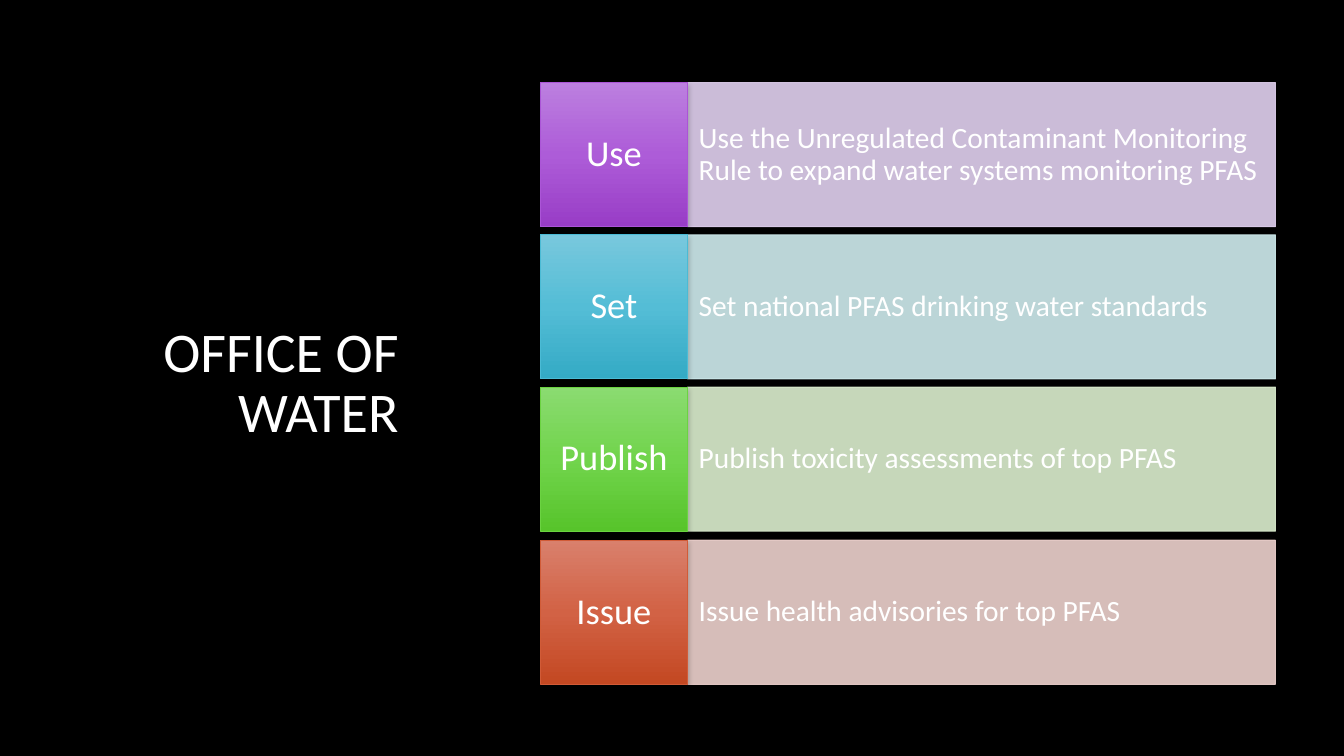
"""Build the Office of Water slide: a title beside four labelled action rows."""
from dataclasses import dataclass

from lxml import etree
from pptx import Presentation
from pptx import util as u
from pptx.dml.color import RGBColor
from pptx.enum import shapes, text
from pptx.oxml import ns

PX = 9144


@dataclass(frozen=True)
class Theme:
    font: str = "Calibri"
    background: str = "000000"
    ink: str = "FFFFFF"
    shadow: str = "000000"
    title_size: int = 40
    label_size: int = 26
    body_size: int = 21
    line_width: float = 0.75


@dataclass(frozen=True)
class Box:
    left: int
    top: int
    width: int
    height: int

    def emu(self) -> list[int]:
        return [v * PX for v in (self.left, self.top, self.width, self.height)]


@dataclass(frozen=True)
class Action:
    label: str
    body: str
    gradient: tuple[str, str, str]
    edge: str
    tint: str


THEME = Theme()
ACTIONS = [
    Action("Use", "Use the Unregulated Contaminant Monitoring Rule to expand water systems monitoring PFAS",
           ("BC7FDF", "AD5CD8", "983DC6"), "AB54D7", "E2D1F0"),
    Action("Set", "Set national PFAS drinking water standards",
           ("78C8DD", "54BDD6", "34AAC5"), "4ABBD5", "D0EDEF"),
    Action("Publish", "Publish toxicity assessments of top PFAS",
           ("8BDB71", "71D44C", "57C42B"), "6BD341", "DCEFCF"),
    Action("Issue", "Issue health advisories for top PFAS",
           ("D9806C", "D26245", "C34822"), "D15B37", "EED2CE"),
]


def child(parent, tag: str, **attrs: object):
    return etree.SubElement(parent, ns.qn(tag), {k: str(v) for k, v in attrs.items()})


def write(sp, content: str, *, size: int, align, anchor=text.MSO_ANCHOR.MIDDLE,
          inset: tuple[int, int] = (10, 5)) -> None:
    tf = sp.text_frame
    tf.word_wrap = True
    tf.vertical_anchor = anchor
    tf.margin_left = tf.margin_right = inset[0] * PX
    tf.margin_top = tf.margin_bottom = inset[1] * PX
    p = tf.paragraphs[0]
    p.alignment = align
    p.line_spacing = 0.9
    r = p.add_run()
    r.text = content
    r.font.name = THEME.font
    r.font.size = u.Pt(size)
    r.font.color.rgb = RGBColor.from_string(THEME.ink)


def add_rect(s, box: Box, fill: str, edge: str):
    sp = s.shapes.add_shape(shapes.MSO_SHAPE.RECTANGLE, *box.emu())
    sp.shadow.inherit = False
    sp.fill.solid()
    sp.fill.fore_color.rgb = RGBColor.from_string(fill)
    sp.line.color.rgb = RGBColor.from_string(edge)
    sp.line.width = u.Pt(THEME.line_width)
    return sp


def make_translucent(sp, percent: int) -> None:
    for color in sp.element.spPr.iter(ns.qn("a:srgbClr")):
        child(color, "a:alpha", val=percent * 1000)


def set_gradient(sp, colors: tuple[str, str, str]) -> None:
    solid = sp.element.spPr.find(ns.qn("a:solidFill"))
    grad = etree.Element(ns.qn("a:gradFill"), rotWithShape="1")
    stops = child(grad, "a:gsLst")
    for i, color in enumerate(colors):
        child(child(stops, "a:gs", pos=i * 50000), "a:srgbClr", val=color)
    child(grad, "a:lin", ang=90 * 60000, scaled=0)
    solid.getparent().replace(solid, grad)


def add_shadow(sp) -> None:
    effects = sp.element.spPr.find(ns.qn("a:effectLst"))
    shadow = child(effects, "a:outerShdw", blurRad=u.Pt(4), dist=u.Pt(2),
                   dir=90 * 60000, algn="ctr", rotWithShape=0)
    child(child(shadow, "a:srgbClr", val=THEME.shadow), "a:alpha", val=28000)


def add_action(s, action: Action, top: int) -> None:
    body = add_rect(s, Box(682, top, 583, 143), action.tint, action.tint)
    make_translucent(body, 90)
    write(body, action.body, size=THEME.body_size, align=text.PP_ALIGN.LEFT, inset=(11, 36))
    tile = add_rect(s, Box(536, top, 146, 143), action.gradient[1], action.edge)
    set_gradient(tile, action.gradient)
    add_shadow(tile)
    write(tile, action.label, size=THEME.label_size, align=text.PP_ALIGN.CENTER, inset=(8, 14))


def main() -> None:
    prs = Presentation()
    prs.slide_width, prs.slide_height = 1333 * PX, 750 * PX
    s = prs.slides.add_slide(prs.slide_layouts[6])
    s.background.fill.solid()
    s.background.fill.fore_color.rgb = RGBColor.from_string(THEME.background)
    title = s.shapes.add_textbox(*Box(64, 184, 341, 262).emu())
    write(title, "OFFICE OF WATER", size=THEME.title_size, align=text.PP_ALIGN.RIGHT,
          anchor=text.MSO_ANCHOR.BOTTOM)
    for i, action in enumerate(ACTIONS):
        add_action(s, action, 82 + i * 454 // 3)
    prs.save("out.pptx")


if __name__ == "__main__":
    main()
